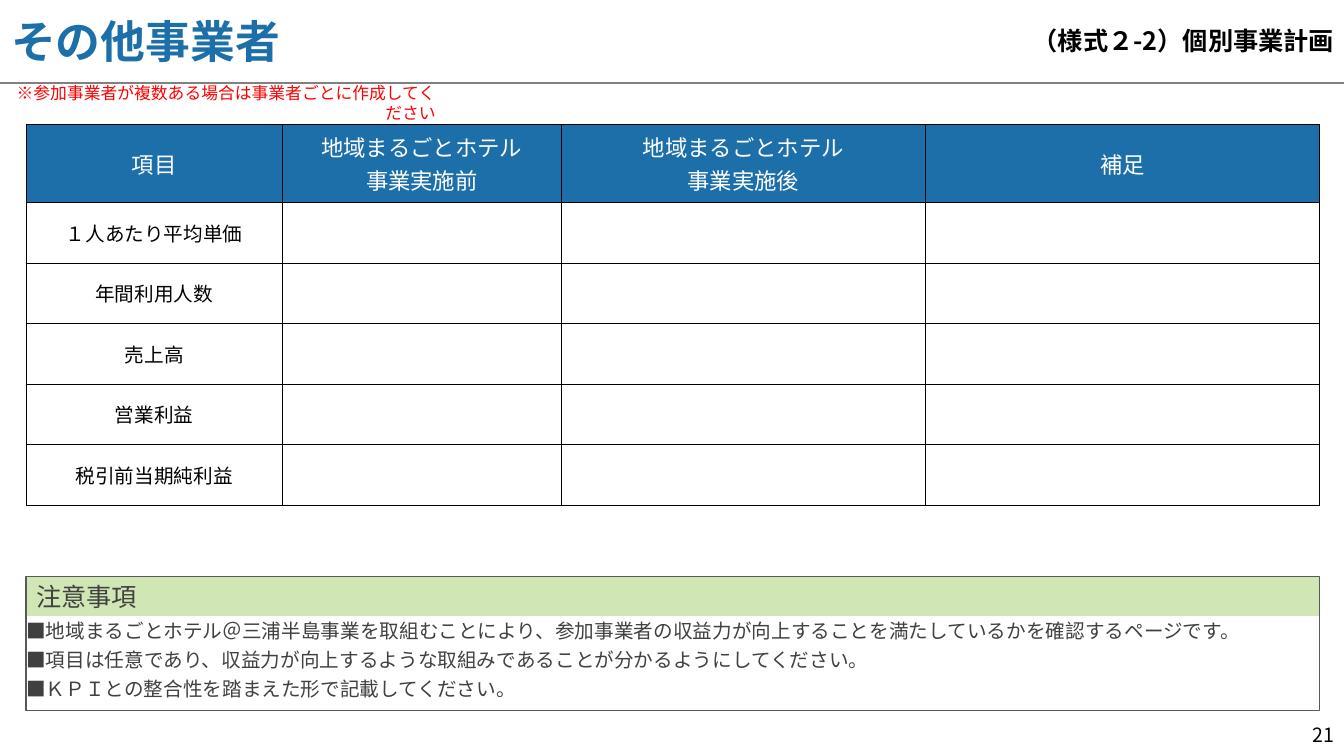
from lxml.etree import SubElement, fromstring
from pptx import Presentation
from pptx.dml.color import RGBColor
from pptx.enum.shapes import MSO_CONNECTOR, MSO_SHAPE
from pptx.enum.text import MSO_ANCHOR, MSO_AUTO_SIZE, PP_ALIGN
from pptx.oxml.ns import nsdecls, qn
from pptx.util import Inches, Pt

BLUE = RGBColor(0x1D, 0x6F, 0xA9)
GREEN = RGBColor(0xD1, 0xE6, 0xB5)
RED = RGBColor(0xFF, 0x00, 0x00)
BLACK = RGBColor(0x00, 0x00, 0x00)
WHITE = RGBColor(0xFF, 0xFF, 0xFF)
GRAY = RGBColor(0x80, 0x80, 0x80)
DARK = RGBColor(0x40, 0x40, 0x40)
FRAME = RGBColor(0x59, 0x59, 0x59)

COLUMNS, ROWS = 133.3, 75
LEFT, WIDTH = 2.6, 128.3
TIGHT = {"margin_top": Inches(0.04), "margin_bottom": Inches(0.04)}
HEADINGS = ["項目", "地域まるごとホテル\n事業実施前", "地域まるごとホテル\n事業実施後", "補足"]
ITEMS = ["１人あたり平均単価", "年間利用人数", "売上高", "営業利益", "税引前当期純利益"]
NOTES = [
    "■地域まるごとホテル＠三浦半島事業を取組むことにより、参加事業者の収益力が向上することを満たしているかを確認するページです。",
    "■項目は任意であり、収益力が向上するような取組みであることが分かるようにしてください。",
    "■ＫＰＩとの整合性を踏まえた形で記載してください。",
]


def assign(target, values):
    """Set each named attribute of the target."""
    for name, value in values.items():
        setattr(target, name, value)


class PlanPage:
    """Style and current slide, measured on a grid of columns and rows."""

    typeface = "Noto Sans CJK JP"

    def __init__(self, deck):
        """Add a page with title and body placeholders."""
        self.page = deck.slides.add_slide(deck.slide_layouts[1])
        self.column = deck.slide_width / COLUMNS
        self.row = deck.slide_height / ROWS

    def area(self, left, top, width, height):
        """Turn grid units into slide lengths."""
        return (round(left * self.column), round(top * self.row),
                round(width * self.column), round(height * self.row))

    def set_text(self, frame, text, size, color, bold=False, frame_format=None, **paragraph_format):
        """Fill a text frame, one paragraph per line."""
        assign(frame, {"word_wrap": True, "vertical_anchor": MSO_ANCHOR.MIDDLE} | (frame_format or {}))
        frame.text = text
        for para in frame.paragraphs:
            assign(para, {"alignment": PP_ALIGN.LEFT} | paragraph_format)
            for span in para.runs:
                assign(span.font, {"name": self.typeface, "size": Pt(size), "bold": bold})
                span.font.color.rgb = color
                SubElement(span.font._element, qn("a:ea"), typeface=self.typeface)

    def placeholder(self, index, place, text, size, color, bold=False, frame_format=None, **paragraph_format):
        """Move a template placeholder and fill it."""
        box = self.page.placeholders[index]
        assign(box, dict(zip(("left", "top", "width", "height"), self.area(*place))))
        self.set_text(box.text_frame, text, size, color, bold,
                      {"auto_size": MSO_AUTO_SIZE.NONE} | (frame_format or {}), **paragraph_format)
        return box

    def notes(self, place, lines):
        """Set the list in the body placeholder."""
        inset = {"margin_left": 0, "margin_right": 0, "margin_bottom": 0,
                 "margin_top": Inches(0.01), "vertical_anchor": MSO_ANCHOR.TOP}
        box = self.placeholder(1, place, "\n".join(lines), 14, DARK, frame_format=inset,
                               line_spacing=Pt(8), space_before=Pt(0.9), space_after=Pt(12))
        for para in box.text_frame.paragraphs:
            properties = para._p.get_or_add_pPr()
            properties.set("marL", "0")
            properties.set("indent", "0")
            SubElement(properties, qn("a:buNone"))
        box.text_frame.paragraphs[0].space_before = Pt(0)

    def label(self, place, text, size, color, **formats):
        """Add a right-aligned text box."""
        box = self.page.shapes.add_textbox(*self.area(*place))
        self.set_text(box.text_frame, text, size, color, alignment=PP_ALIGN.RIGHT, **formats)

    def rule(self, top):
        """Draw a line across the page."""
        start, height, end, _ = self.area(0, top, COLUMNS, 0)
        line = self.page.shapes.add_connector(MSO_CONNECTOR.STRAIGHT, start, height, end, height)
        line.line.color.rgb = GRAY
        line.line.width = Pt(1.5)
        SubElement(line._element.spPr, qn("a:effectLst"))

    def panel(self, place, fill=None, outline=None):
        """Draw a rectangle with a fill or an outline."""
        box = self.page.shapes.add_shape(MSO_SHAPE.RECTANGLE, *self.area(*place))
        box.shadow.inherit = False
        box.fill.background()
        box.line.fill.background()
        if fill:
            box.fill.solid()
            box.fill.fore_color.rgb = fill
        if outline:
            box.line.color.rgb = outline
            box.line.width = Pt(1)
        return box

    def border(self, cell):
        """Give a cell thin black edges."""
        for position, side in enumerate("LRTB"):
            edge = fromstring(f'<a:ln{side} {nsdecls("a")} w="6350"><a:solidFill>'
                              f'<a:srgbClr val="{BLACK}"/></a:solidFill></a:ln{side}>')
            cell._tc.get_or_add_tcPr().insert(position, edge)

    def table(self, place, widths, heights, rows):
        """Add a bordered table with a coloured heading row."""
        grid = self.page.shapes.add_table(len(heights), len(widths), *self.area(*place)).table
        assign(grid, {"first_row": False, "horz_banding": False})
        for column, width in zip(grid.columns, widths):
            column.width = round(width * self.column)
        for number, (row, height, texts) in enumerate(zip(grid.rows, heights, rows)):
            row.height = round(height * self.row)
            size, color = (14, BLACK) if number else (16, WHITE)
            for cell, text in zip(row.cells, texts):
                cell.vertical_anchor = MSO_ANCHOR.MIDDLE
                if number:
                    cell.fill.background()
                else:
                    cell.fill.solid()
                    cell.fill.fore_color.rgb = BLUE
                if text:
                    self.set_text(cell.text_frame, text, size, color, alignment=PP_ALIGN.CENTER)
                    cell.vertical_anchor = MSO_ANCHOR.MIDDLE
                self.border(cell)


def main():
    """Build the plan page and save it."""
    deck = Presentation()
    assign(deck, {"slide_width": Inches(13.33), "slide_height": Inches(7.5)})
    plan = PlanPage(deck)
    plan.rule(8.2)
    plan.placeholder(0, (0.1, 0, 105.9, 8), "その他事業者", 32, BLUE, bold=True)
    plan.label((126.7, 71.2, 6.6, 3.8), "21", 14, BLACK,
               frame_format={"vertical_anchor": MSO_ANCHOR.TOP})
    plan.label((101.2, 0.7, 32.1, 6.6), "（様式２-2）個別事業計画", 18, BLACK,
               bold=True, frame_format=TIGHT)
    plan.label((0.1, 8.2, 44.1, 4), "※参加事業者が複数ある場合は事業者ごとに作成してください", 12, RED,
               frame_format=TIGHT)
    plan.table((LEFT, 12.3, WIDTH, 37.8), [25.4, 27.7, 36.1, 39.1], [7.8] + [6] * len(ITEMS),
               [HEADINGS] + [[item, "", "", ""] for item in ITEMS])
    plan.notes((LEFT, 62.5, WIDTH, 7.1), NOTES)
    heading = plan.panel((LEFT, 57.2, WIDTH, 3.9), fill=GREEN)
    plan.set_text(heading.text_frame, "注意事項", 18, DARK)
    plan.panel((LEFT, 57.2, WIDTH, 13.3), outline=FRAME)
    deck.save("out.pptx")


if __name__ == "__main__":
    main()
